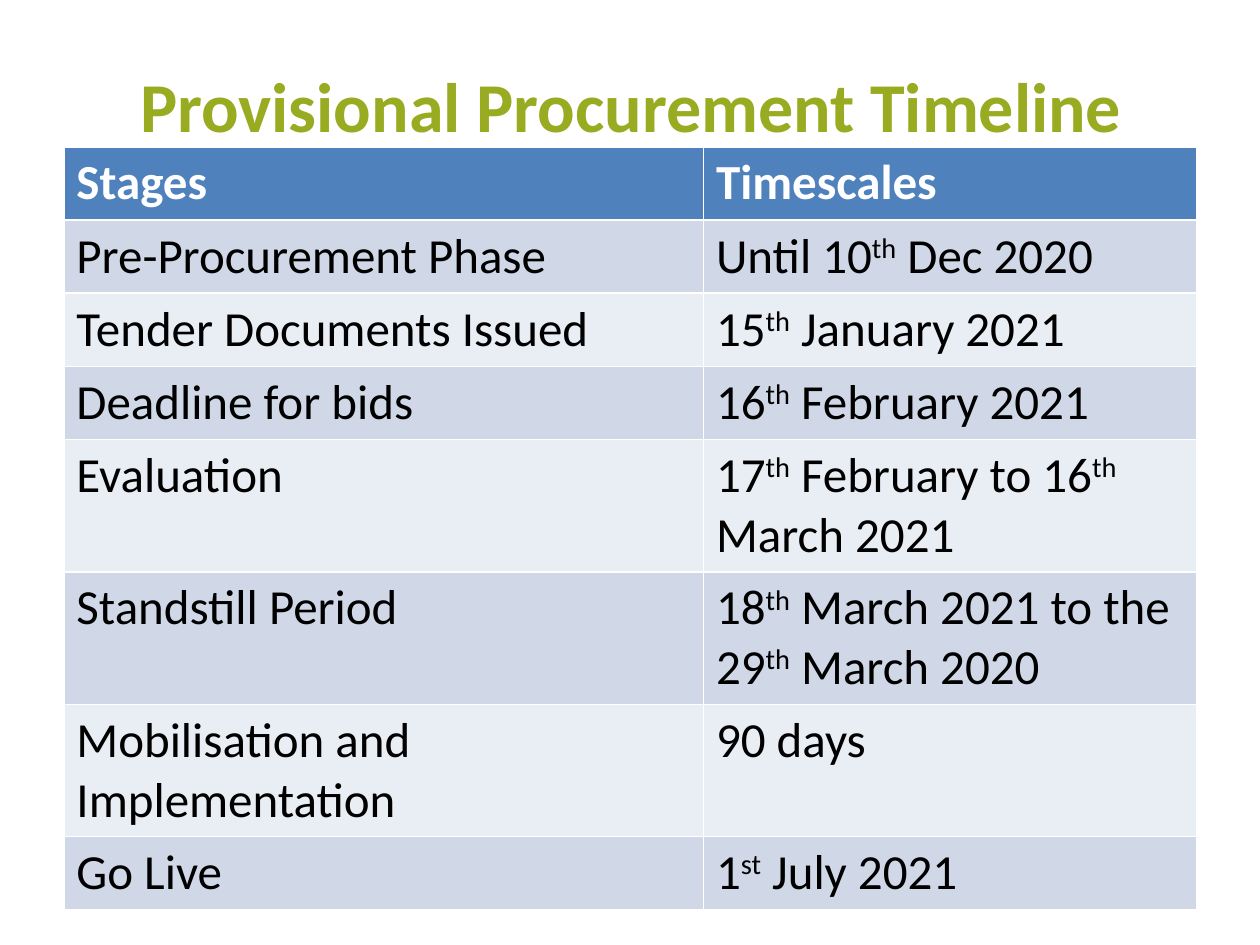
from pptx import Presentation
from pptx.dml.color import RGBColor
from pptx.enum.text import MSO_ANCHOR, PP_ALIGN
from pptx.util import Pt

TITLE = "Provisional Procurement Timeline"
# Text between carets is superscript.
HEADER = ("Stages", "Timescales")
STAGES = [
    ("Pre-Procurement Phase", "Until 10^th^ Dec 2020"),
    ("Tender Documents Issued", "15^th^ January 2021"),
    ("Deadline for bids", "16^th^ February 2021"),
    ("Evaluation", "17^th^ February to 16^th^ March 2021"),
    ("Standstill Period", "18^th^ March 2021 to the 29^th^ March 2020"),
    ("Mobilisation and Implementation", "90 days"),
    ("Go Live", "1^st^ July 2021"),
]
TWO_LINE_STAGES = {"Evaluation", "Standstill Period", "Mobilisation and Implementation"}

THEME = {
    "font": "Calibri",
    "title_size": 40,
    "table_size": 28,
    "title": "99AB21",
    "header_text": "FFFFFF",
    "body_text": "000000",
    "header_fill": "4F81BD",
    "bands": ("D0D8E8", "E9EDF4"),
}
TITLE_BOX = (36.5, 15, 648, 90)
TABLE_LEFT, TABLE_TOP = 36.5, 84
COLUMN_WIDTHS = (365.5, 282)
ONE_LINE, TWO_LINES = 41.8, 75.5


def write(frame, text, size, color, bold=False, align=PP_ALIGN.LEFT):
    para = frame.paragraphs[0]
    para.alignment = align
    for index, part in enumerate(text.split("^")):
        span = para.add_run()
        span.text = part
        span.font.name = THEME["font"]
        span.font.size = Pt(size)
        span.font.bold = bold
        span.font.color.rgb = RGBColor.from_string(color)
        if index % 2:
            span._r.get_or_add_rPr().set("baseline", "30000")


def add_title(page):
    box = page.shapes.title
    box.left, box.top, box.width, box.height = map(Pt, TITLE_BOX)
    box.text_frame.vertical_anchor = MSO_ANCHOR.MIDDLE
    write(box.text_frame, TITLE, THEME["title_size"], THEME["title"],
          bold=True, align=PP_ALIGN.CENTER)


def add_timeline(page):
    rows = [HEADER] + STAGES
    heights = [TWO_LINES if row[0] in TWO_LINE_STAGES else ONE_LINE for row in rows]
    table = page.shapes.add_table(
        len(rows), len(HEADER), Pt(TABLE_LEFT), Pt(TABLE_TOP),
        Pt(sum(COLUMN_WIDTHS)), Pt(sum(heights))).table
    for column, width in zip(table.columns, COLUMN_WIDTHS):
        column.width = Pt(width)
    for number, (row, height) in enumerate(zip(rows, heights)):
        table.rows[number].height = Pt(height)
        header = number == 0
        fill = THEME["header_fill"] if header else THEME["bands"][(number - 1) % 2]
        color = THEME["header_text"] if header else THEME["body_text"]
        for position, text in enumerate(row):
            cell = table.cell(number, position)
            cell.fill.solid()
            cell.fill.fore_color.rgb = RGBColor.from_string(fill)
            write(cell.text_frame, text, THEME["table_size"], color, bold=header)


def main():
    deck = Presentation()
    deck.slide_width, deck.slide_height = Pt(720), Pt(540)
    page = deck.slides.add_slide(deck.slide_layouts[5])
    add_title(page)
    add_timeline(page)
    deck.save("out.pptx")


if __name__ == "__main__":
    main()
